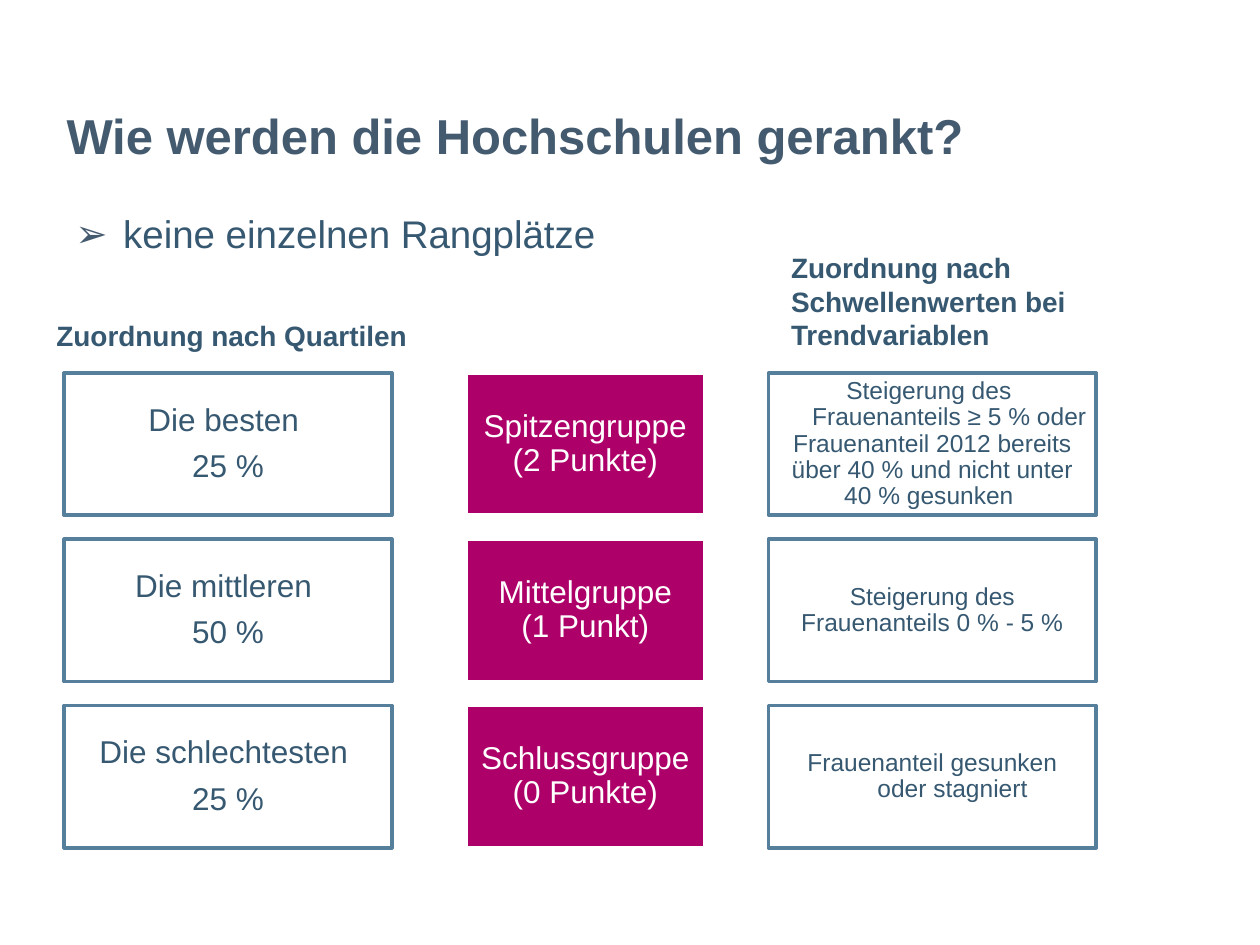
from lxml.etree import SubElement
from pptx import Presentation
from pptx.dml.color import RGBColor
from pptx.enum.shapes import MSO_SHAPE
from pptx.enum.text import MSO_ANCHOR, PP_ALIGN
from pptx.oxml.ns import qn
from pptx.util import Inches, Pt

SLATE = RGBColor(0x44, 0x5A, 0x6F)
BLUE = RGBColor(0x36, 0x58, 0x71)
BORDER = RGBColor(0x56, 0x7F, 0x9B)
MAGENTA = RGBColor(0xAE, 0x00, 0x69)
WHITE = RGBColor(0xFF, 0xFF, 0xFF)


def add_run(p, text, size, color, bold=False):
    r = p.add_run()
    r.text = text
    r.font.name = "Arial"
    r.font.size = Pt(size)
    r.font.bold = bold
    r.font.color.rgb = color


def add_text(x, y, w, h, text, size, color, bold=False):
    s = slide.shapes.add_textbox(Inches(x), Inches(y), Inches(w), Inches(h))
    tf = s.text_frame
    tf.word_wrap = True
    add_run(tf.paragraphs[0], text, size, color, bold)
    return tf


prs = Presentation()
prs.slide_width, prs.slide_height = Inches(10), Inches(7.5)
slide = prs.slides.add_slide(prs.slide_layouts[6])

# Title
tf = add_text(0.43, 0.68, 9, 0.78, "Wie werden die Hochschulen gerankt?", 28, SLATE, True)
tf.vertical_anchor = MSO_ANCHOR.MIDDLE

# Bullet point
tf = add_text(0.5, 1.62, 9.5, 5.48, "keine einzelnen Rangplätze", 22, BLUE)
tf.margin_top = Inches(0.08)
p = tf.paragraphs[0]
pPr = p._p.get_or_add_pPr()
pPr.set("marL", str(Inches(0.38)))
pPr.set("indent", str(Inches(-0.38)))
clr = SubElement(pPr, qn("a:buClr"))
SubElement(clr, qn("a:srgbClr"), val=str(SLATE))
SubElement(pPr, qn("a:buFont"), typeface="Arial")
SubElement(pPr, qn("a:buChar"), char="➢")
p.line_spacing = 0.93
p.space_after = Pt(14.2)

# Columns: left, width, inset, size, fill, line, text colour, space after, boxes
# Each box holds paragraphs of (first-line indent, text)
columns = [
    (3.7, 1.89, 0.07, 18, MAGENTA, WHITE, WHITE, 0, [
        [(0, "Spitzengruppe"), (0, "(2 Punkte)")],
        [(0, "Mittelgruppe"), (0, "(1 Punkt)")],
        [(0, "Schlussgruppe"), (0, "(0 Punkte)")],
    ]),
    (0.51, 2.6, 0.07, 18, None, BORDER, BLUE, 7, [
        [(0, "Die besten "), (0, "25 %")],
        [(0, "Die mittleren "), (0, "50 %")],
        [(0, "Die schlechtesten "), (0, "25 %")],
    ]),
    (6.1, 2.6, 0.06, 14, None, BORDER, BLUE, 0, [
        [(0, "Steigerung des "),
         (0.27, "Frauenanteils ≥ 5 % oder Frauenanteil 2012 bereits "
                "über 40 % und nicht unter 40 % gesunken ")],
        [(0, "Steigerung des Frauenanteils 0 % - 5 %")],
        [(0, "Frauenanteil gesunken"), (0.32, "oder stagniert")],
    ]),
]
TOP, HEIGHT, PITCH = 2.96, 1.13, 1.32

for left, width, inset, size, fill, line, color, after, boxes in columns:
    for row, paragraphs in enumerate(boxes):
        sp = slide.shapes.add_shape(
            MSO_SHAPE.RECTANGLE, Inches(left), Inches(TOP + row * PITCH),
            Inches(width), Inches(HEIGHT))
        sp.shadow.inherit = False
        if fill is None:
            sp.fill.background()
        else:
            sp.fill.solid()
            sp.fill.fore_color.rgb = fill
        sp.line.color.rgb = line
        sp.line.width = Pt(2)
        tf = sp.text_frame
        tf.word_wrap = True
        tf.vertical_anchor = MSO_ANCHOR.MIDDLE
        tf.margin_left = tf.margin_right = Inches(inset)
        tf.margin_top = tf.margin_bottom = Inches(inset)
        for i, (indent, text) in enumerate(paragraphs):
            p = tf.paragraphs[0] if i == 0 else tf.add_paragraph()
            p.alignment = PP_ALIGN.CENTER
            p.line_spacing = 0.9
            p.space_after = Pt(after)
            if indent:
                p._p.get_or_add_pPr().set("indent", str(Inches(indent)))
            add_run(p, text, size, color)

# Column headings
add_text(0.35, 2.48, 3, 0.37, "Zuordnung nach Quartilen", 16, BLUE, True)
add_text(6.18, 1.94, 2.44, 0.91,
         "Zuordnung nach Schwellenwerten bei Trendvariablen", 16, BLUE, True)

prs.save("out.pptx")
